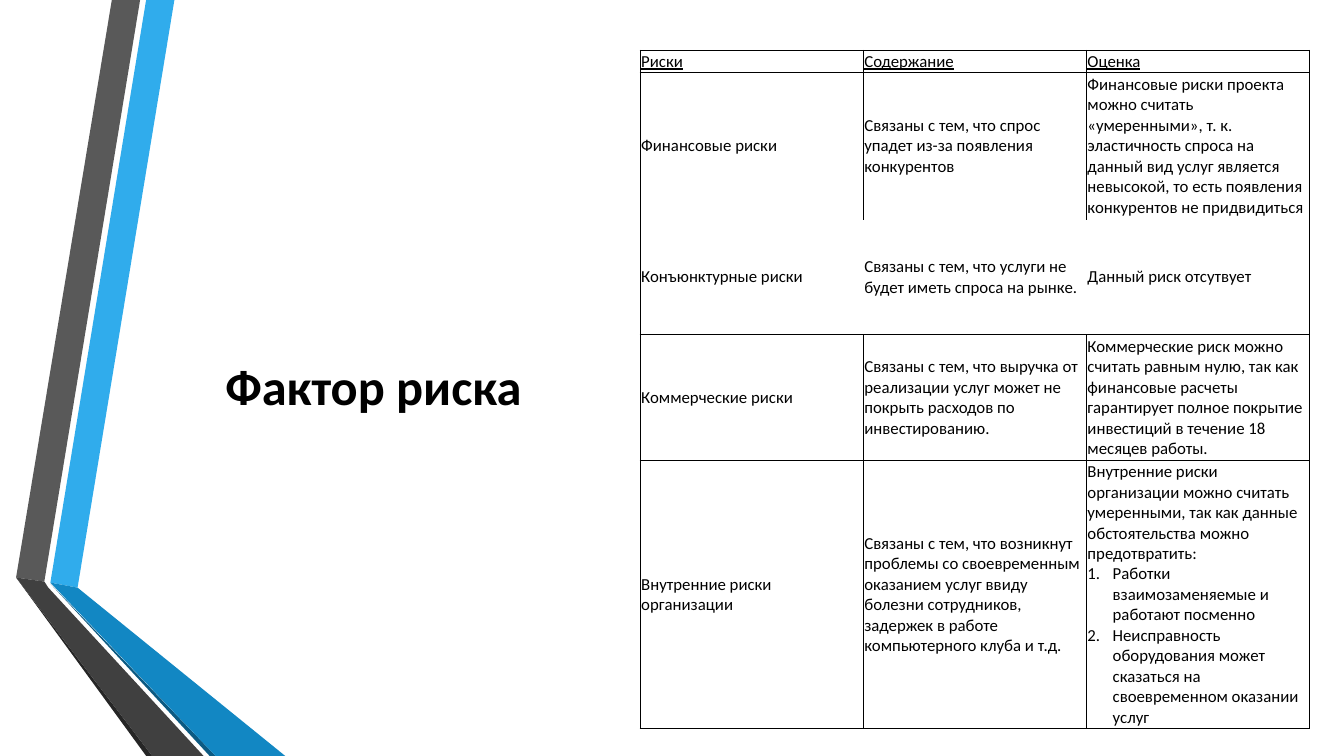
import pptx
import pptx.dml.color
import pptx.enum.text
import pptx.oxml
import pptx.oxml.ns
import pptx.util
from pptx.util import Inches

# Content
FONT = "Calibri"
TITLE = "Фактор риска"
HEADERS = ["Риски", "Содержание", "Оценка"]
RISKS = [
    ("Финансовые риски",
     "Связаны с тем, что спрос упадет из-за появления конкурентов",
     "Финансовые риски проекта можно считать «умеренными», т. к. эластичность спроса "
     "на данный вид услуг является невысокой, то есть появления конкурентов не придвидиться"),
    ("Конъюнктурные риски",
     "Связаны с тем, что услуги не будет иметь спроса на рынке.",
     "Данный риск отсутвует"),
    ("Коммерческие риски",
     "Связаны с тем, что выручка от реализации услуг может не покрыть расходов "
     "по инвестированию.",
     "Коммерческие риск можно считать равным нулю, так как финансовые расчеты "
     "гарантирует полное покрытие инвестиций в течение 18 месяцев работы."),
    ("Внутренние риски организации",
     "Связаны с тем, что возникнут проблемы со своевременным оказанием услуг ввиду "
     "болезни сотрудников, задержек в работе компьютерного клуба и т.д.",
     "Внутренние риски организации можно считать умеренными, так как данные "
     "обстоятельства можно предотвратить:"),
]
MEASURES = [
    "Работки взаимозаменяемые и работают посменно",
    "Неисправность оборудования может сказаться на своевременном оказании услуг",
]
OPEN_ROW = 2  # the row without inner lines or a top line

# Ribbon outlines in inches, back to front
RIBBONS = [
    ("30ACEC", [(0.5, 5.78), (0.77, 5.83), (1.73, 0), (1.45, 0)]),
    ("595959", [(1.39, 0), (1.11, 0), (0.16, 5.73), (0.44, 5.77)]),
    ("262626", [(0.16, 5.73), (1.45, 7.5), (1.51, 7.5)]),
    ("0C5A82", [(0.5, 5.79), (2.08, 7.5), (2.14, 7.5)]),
    ("1287C3", [(0.5, 5.78), (2.14, 7.5), (2.83, 7.5), (0.77, 5.83)]),
    ("404040", [(2.02, 7.5), (0.48, 5.83), (0.44, 5.77), (0.16, 5.73), (1.51, 7.5)]),
]

# Table layout
TABLE_LEFT, TABLE_TOP = 6.35, 0.5
COLUMN_WIDTH = 6.64 / len(HEADERS)
ROW_HEIGHTS = [0.22, 1.46, 1.14, 1.25, 2.66]
CELL_FORMAT = {
    "margin_left": Inches(0.01), "margin_right": Inches(0.01),
    "margin_top": Inches(0.01), "margin_bottom": Inches(0.01),
    "vertical_anchor": pptx.enum.text.MSO_ANCHOR.MIDDLE,
}


def color(hex_text):
    return pptx.dml.color.RGBColor.from_string(hex_text)


def set_all(target, values):
    for name, value in values.items():
        setattr(target, name, value)


def write(para, text, size, **style):
    span = para.add_run()
    span.text = text
    set_all(span.font, {"name": FONT, "size": pptx.util.Pt(size), **style})
    span.font.color.rgb = color("000000")


def draw_ribbon(page, fill, points):
    corners = [(Inches(x), Inches(y)) for x, y in points]
    builder = page.shapes.build_freeform(*corners[0])
    builder.add_line_segments(corners[1:], close=True)
    shape = builder.convert_to_shape()
    shape.shadow.inherit = False
    shape.fill.solid()
    shape.fill.fore_color.rgb = color(fill)
    shape.line.fill.background()


def add_number(para):
    properties = para._p.get_or_add_pPr()
    set_all_xml = {"marL": Inches(0.25), "indent": -Inches(0.25)}
    for name, value in set_all_xml.items():
        properties.set(name, str(int(value)))
    number = pptx.oxml.parse_xml(
        f'<a:buAutoNum {pptx.oxml.ns.nsdecls("a")} type="arabicPeriod"/>')
    properties.append(number)


def set_borders(cell, row, column):
    inner = row == OPEN_ROW
    visible = {
        "lnL": column == 0 or not inner,
        "lnR": column == len(HEADERS) - 1 or not inner,
        "lnT": not inner,
        "lnB": row + 1 != OPEN_ROW,
    }
    properties = cell._tc.get_or_add_tcPr()
    for side, shown in visible.items():
        paint = '<a:solidFill><a:srgbClr val="000000"/></a:solidFill>' if shown else "<a:noFill/>"
        properties.append(pptx.oxml.parse_xml(
            f'<a:{side} {pptx.oxml.ns.nsdecls("a")} w="12700">{paint}</a:{side}>'))


def add_title(page):
    box = page.shapes.add_textbox(Inches(1.48), Inches(3.48), Inches(4.45), Inches(0.69))
    set_all(box.text_frame, {"word_wrap": True,
                             "vertical_anchor": pptx.enum.text.MSO_ANCHOR.MIDDLE})
    para = box.text_frame.paragraphs[0]
    para.alignment = pptx.enum.text.PP_ALIGN.CENTER
    write(para, TITLE, 36, bold=True)


def add_risk_table(page):
    rows = [HEADERS, *RISKS]
    table = page.shapes.add_table(
        len(rows), len(HEADERS), Inches(TABLE_LEFT), Inches(TABLE_TOP),
        Inches(COLUMN_WIDTH * len(HEADERS)), Inches(sum(ROW_HEIGHTS))).table
    set_all(table, {"first_row": False, "horz_banding": False})
    for column in table.columns:
        column.width = Inches(COLUMN_WIDTH)
    for row, height in zip(table.rows, ROW_HEIGHTS):
        row.height = Inches(height)
    for r, texts in enumerate(rows):
        for c, text in enumerate(texts):
            cell = table.cell(r, c)
            set_all(cell, CELL_FORMAT)
            set_borders(cell, r, c)
            cell.fill.background()
            write(cell.text_frame.paragraphs[0], text, 12, underline=r == 0)
    # Numbered measures close the last cell
    for measure in MEASURES:
        para = table.cell(len(rows) - 1, len(HEADERS) - 1).text_frame.add_paragraph()
        add_number(para)
        write(para, measure, 12)


def main():
    deck = pptx.Presentation()
    set_all(deck, {"slide_width": Inches(13.33), "slide_height": Inches(7.5)})
    page = deck.slides.add_slide(deck.slide_layouts[6])
    for fill, points in RIBBONS:
        draw_ribbon(page, fill, points)
    add_title(page)
    add_risk_table(page)
    deck.save("out.pptx")


if __name__ == "__main__":
    main()
